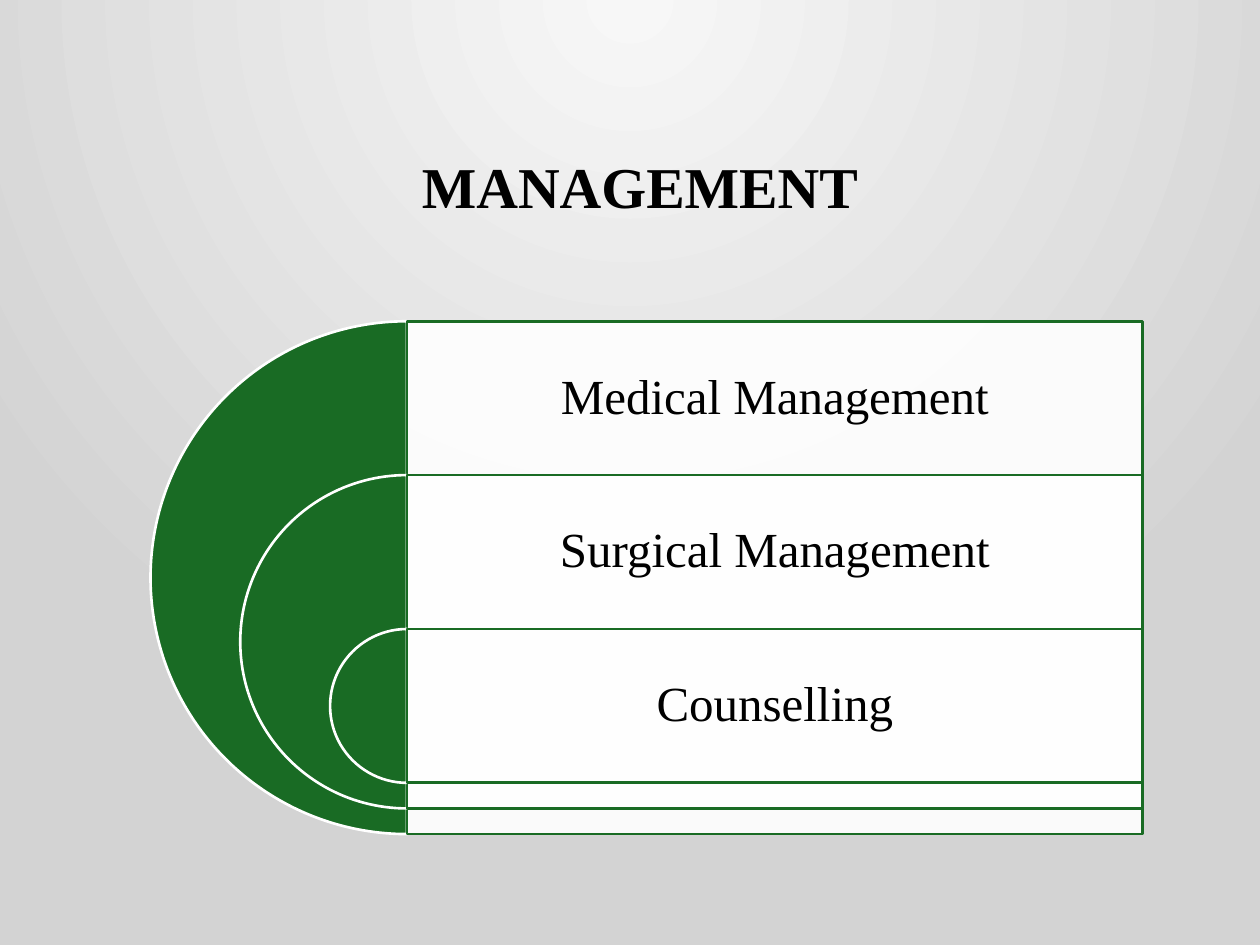
"""Build the management overview slide with nested half circles."""
from lxml import etree
from pptx import Presentation
from pptx.dml.color import RGBColor
from pptx.enum.shapes import MSO_SHAPE
from pptx.enum.text import MSO_ANCHOR, PP_ALIGN
from pptx.oxml.ns import qn
from pptx.util import Inches, Pt

PIE, RECTANGLE = MSO_SHAPE.PIE, MSO_SHAPE.RECTANGLE
LEFT, CENTER, MIDDLE = PP_ALIGN.LEFT, PP_ALIGN.CENTER, MSO_ANCHOR.MIDDLE

TITLE = "MANAGEMENT"
TOPICS = ["Medical Management", "Surgical Management", "Counselling"]
COLORS = {"glow": "F7F7F7", "edge": "D3D3D3", "green": "196B24", "white": "FFFFFF", "text": "000000"}
TITLE_FONT = {"name": "Times New Roman", "size": Pt(33), "bold": True}
TOPIC_FONT = {"name": "Times New Roman", "size": Pt(28), "bold": False}
GLOW_CENTER = {"l": "43000", "t": "0", "r": "43000", "b": "100000"}
AXIS, TOP, WIDTH, DIAMETER = 3.23, 2.55, 5.84, 4.07
ROW_SHARE, SHRINK = 0.3, 0.35


def color(name):
    return RGBColor.from_string(COLORS[name])


def paint_background(page):
    fill = page.background.fill
    fill.gradient()
    for stop, name in zip(fill.gradient_stops, ("glow", "edge")):
        stop.color.rgb = color(name)
    gradient = page.element.find(".//" + qn("a:gradFill"))
    gradient.remove(gradient.find(qn("a:lin")))
    circle = etree.SubElement(gradient, qn("a:path"), path="circle")
    etree.SubElement(circle, qn("a:fillToRect"), GLOW_CENTER)


def add_shape(page, kind, place, fill, line):
    shape = page.shapes.add_shape(kind, *map(Inches, place))
    shape.shadow.inherit = False
    shape.fill.solid()
    shape.fill.fore_color.rgb = color(fill)
    shape.line.color.rgb = color(line)
    shape.line.width = Pt(1.5)
    return shape


def add_text(page, text, place, font, align, inset):
    frame = page.shapes.add_textbox(*map(Inches, place)).text_frame
    frame.word_wrap = True
    frame.vertical_anchor = MIDDLE
    for side in ("left", "right", "top", "bottom"):
        setattr(frame, f"margin_{side}", Inches(inset))
    para = frame.paragraphs[0]
    para.alignment, para.line_spacing = align, 0.9
    span = para.add_run()
    span.text = text
    span.font.color.rgb = color("text")
    for key, value in font.items():
        setattr(span.font, key, value)


def add_topic(page, index, text):
    row = DIAMETER * ROW_SHARE
    size = DIAMETER * (1 - SHRINK * index)
    top = TOP + row * index
    pie = add_shape(page, PIE, (AXIS - size / 2, top, size, size), "green", "white")
    pie.adjustments[0], pie.adjustments[1] = 54, 162
    panel = add_shape(page, RECTANGLE, (AXIS, top, WIDTH, size), "white", "green")
    tint = panel.fill.fore_color._xFill.find(qn("a:srgbClr"))
    etree.SubElement(tint, qn("a:alpha"), val="90000")
    add_text(page, text, (AXIS, top, WIDTH, row), TOPIC_FONT, CENTER, 0.12)


def main():
    deck = Presentation()
    deck.slide_width, deck.slide_height = Inches(10), Inches(7.5)
    page = deck.slides.add_slide(deck.slide_layouts[6])
    paint_background(page)
    add_text(page, TITLE, (3.25, 1.08, 4.42, 0.86), TITLE_FONT, LEFT, 0.1)
    for index, text in enumerate(TOPICS):
        add_topic(page, index, text)
    deck.save("out.pptx")


if __name__ == "__main__":
    main()
